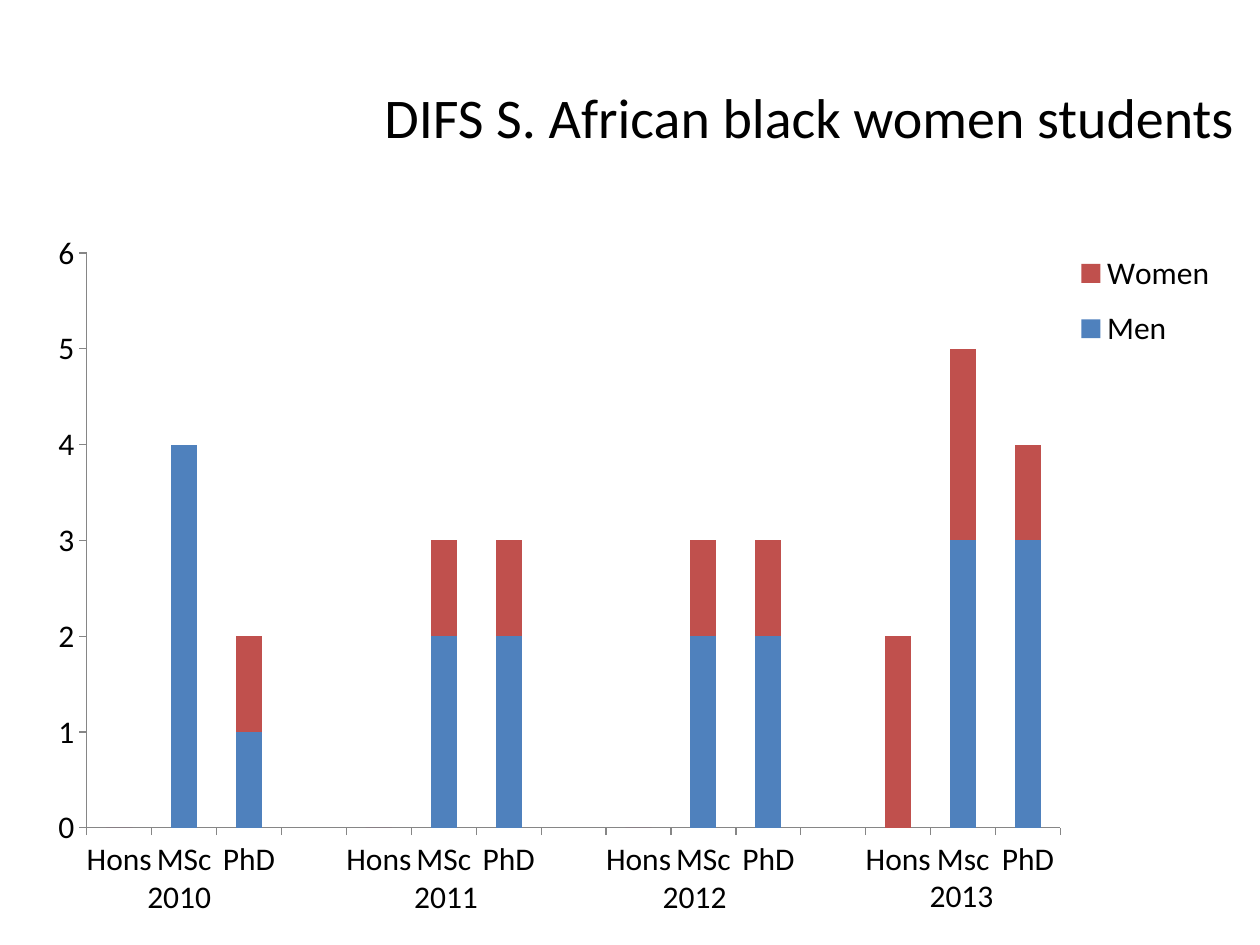
from lxml import etree
from pptx import Presentation
from pptx.chart.data import CategoryChartData
from pptx.dml.color import RGBColor
from pptx.enum.chart import XL_CHART_TYPE, XL_LEGEND_POSITION, XL_TICK_MARK
from pptx.enum.text import MSO_ANCHOR, MSO_AUTO_SIZE, PP_ALIGN
from pptx.oxml.ns import qn
from pptx.util import Cm, Pt

STACKED = XL_CHART_TYPE.COLUMN_STACKED
RIGHT = XL_LEGEND_POSITION.RIGHT
OUTSIDE = XL_TICK_MARK.OUTSIDE
NO_TICK = XL_TICK_MARK.NONE
MIDDLE = MSO_ANCHOR.MIDDLE
GROW = MSO_AUTO_SIZE.SHAPE_TO_FIT_TEXT
ALIGN_RIGHT = PP_ALIGN.RIGHT

FONT = "Calibri"
COLORS = {"text": "000000", "axis": "868686", "men": "4F81BD", "women": "C0504D"}
WIDTH, HEIGHT = 24.41, 13.54  # chart size in cm

# Each year has Hons, MSc and PhD counts; an empty slot parts the years.
LEVELS = [("Hons", "MSc", "PhD")] * 3 + [("Hons", "Msc", "PhD")]
MEN = [(0, 4, 1), (0, 2, 2), (0, 2, 2), (0, 3, 3)]
WOMEN = [(0, 0, 1), (0, 1, 1), (0, 1, 1), (2, 2, 1)]
YEARS = [("2010", 2.72, 17.55), ("2011", 8.1, 17.55),
         ("2012", 13.11, 17.55), ("2013", 18.49, 17.53)]


def rgb(name):
    return RGBColor.from_string(COLORS[name])


def style(font, size):
    font.name = FONT
    font.size = Pt(size)
    font.color.rgb = rgb("text")


def spread(groups, gap):
    """Flatten the groups, with the gap value between them."""
    flat = list(groups[0])
    for group in groups[1:]:
        flat += [gap, *group]
    return flat


def set_layout(parent, index, box, inner=False):
    """Fix a chart part at left, top, width, height, in cm from the chart's corner."""
    old = parent.find(qn("c:layout"))
    if old is not None:
        parent.remove(old)
    layout = etree.Element(qn("c:layout"))
    manual = etree.SubElement(layout, qn("c:manualLayout"))
    if inner:
        etree.SubElement(manual, qn("c:layoutTarget"), val="inner")
    for tag in ("xMode", "yMode"):
        etree.SubElement(manual, qn(f"c:{tag}"), val="edge")
    for tag, part, whole in zip("xywh", box, (WIDTH, HEIGHT) * 2):
        etree.SubElement(manual, qn(f"c:{tag}"), val=str(part / whole))
    parent.insert(index, layout)


def add_title(slide, text):
    title = slide.shapes.title
    title.left, title.top = Cm(1.27), Cm(0.76)
    title.width, title.height = Cm(24.13), Cm(3.18)
    frame = title.text_frame
    frame.text = text
    frame.vertical_anchor = MIDDLE
    para = frame.paragraphs[0]
    para.alignment = ALIGN_RIGHT
    style(para.font, 32)


def format_axis(axis):
    axis.has_major_gridlines = False
    axis.major_tick_mark = OUTSIDE
    axis.minor_tick_mark = NO_TICK
    axis.format.line.color.rgb = rgb("axis")
    axis.format.line.width = Pt(0.75)


def add_students(slide):
    data = CategoryChartData()
    data.categories = spread(LEVELS, "")
    data.add_series("Men ", spread(MEN, None))
    data.add_series("Women", spread(WOMEN, None))
    chart = slide.shapes.add_chart(
        STACKED, Cm(0.71), Cm(4.45), Cm(WIDTH), Cm(HEIGHT), data).chart
    chart.has_title = False
    style(chart.font, 18)

    plot = chart.plots[0]
    plot.gap_width = 150
    plot.overlap = 100
    plot.vary_by_categories = False
    for series, name in zip(plot.series, ("men", "women")):
        series.format.fill.solid()
        series.format.fill.fore_color.rgb = rgb(name)

    format_axis(chart.category_axis)
    format_axis(chart.value_axis)
    chart.value_axis.minimum_scale = 0
    chart.value_axis.maximum_scale = 6
    chart.value_axis.major_unit = 1

    chart.has_legend = True
    chart.legend.position = RIGHT
    chart.legend.include_in_layout = False
    area = chart.element.find(".//" + qn("c:plotArea"))
    legend = chart.element.find(".//" + qn("c:legend"))
    set_layout(area, 0, (1.04, 0.65, 19.63, 11.59), inner=True)
    set_layout(legend, 1, (20.67, 0.33, 3.42, 2.58))


def add_year(slide, text, left, top):
    box = slide.shapes.add_textbox(Cm(left), Cm(top), Cm(1.8), Cm(1.02))
    frame = box.text_frame
    frame.word_wrap = False
    frame.auto_size = GROW
    frame.text = text
    style(frame.paragraphs[0].font, 18)


def main():
    deck = Presentation()
    deck.slide_width, deck.slide_height = Cm(25.4), Cm(19.05)
    slide = deck.slides.add_slide(deck.slide_layouts[5])
    add_title(slide, "DIFS S. African black women students ")
    add_students(slide)
    for year in YEARS:
        add_year(slide, *year)
    deck.save("out.pptx")


if __name__ == "__main__":
    main()
